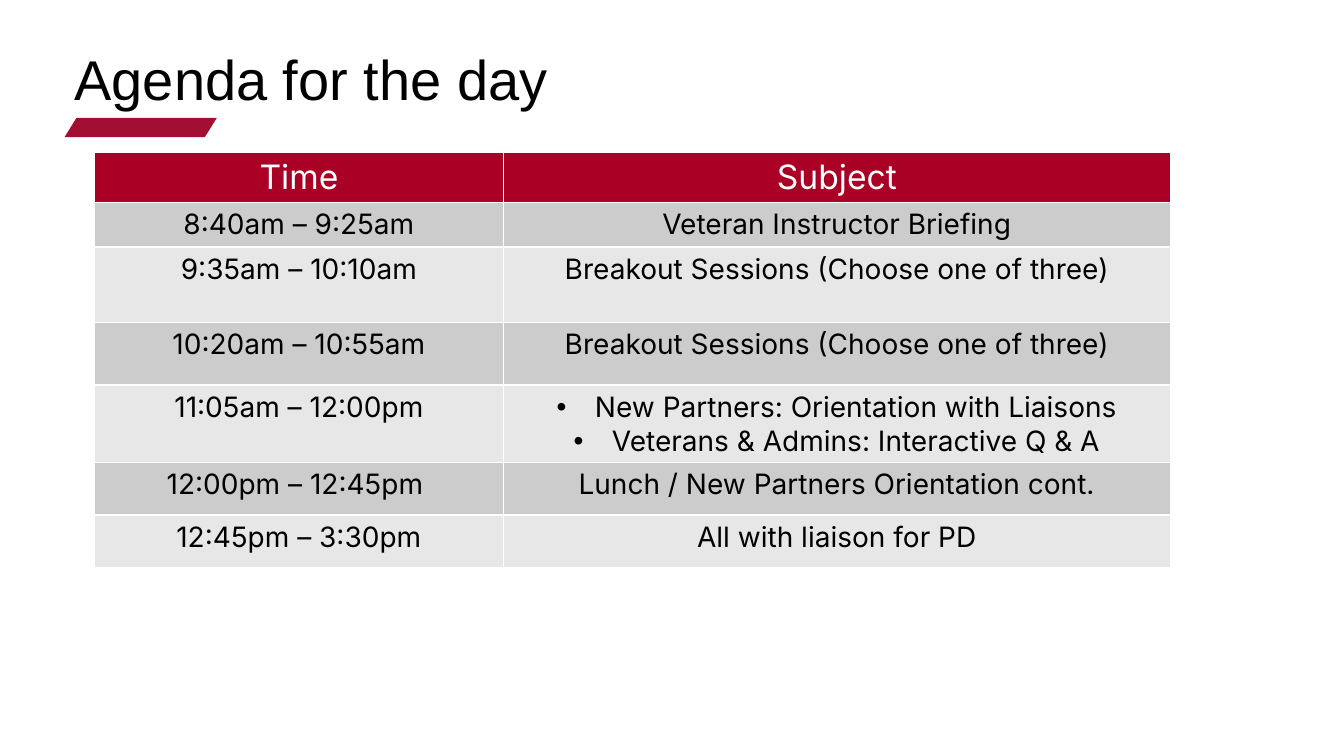
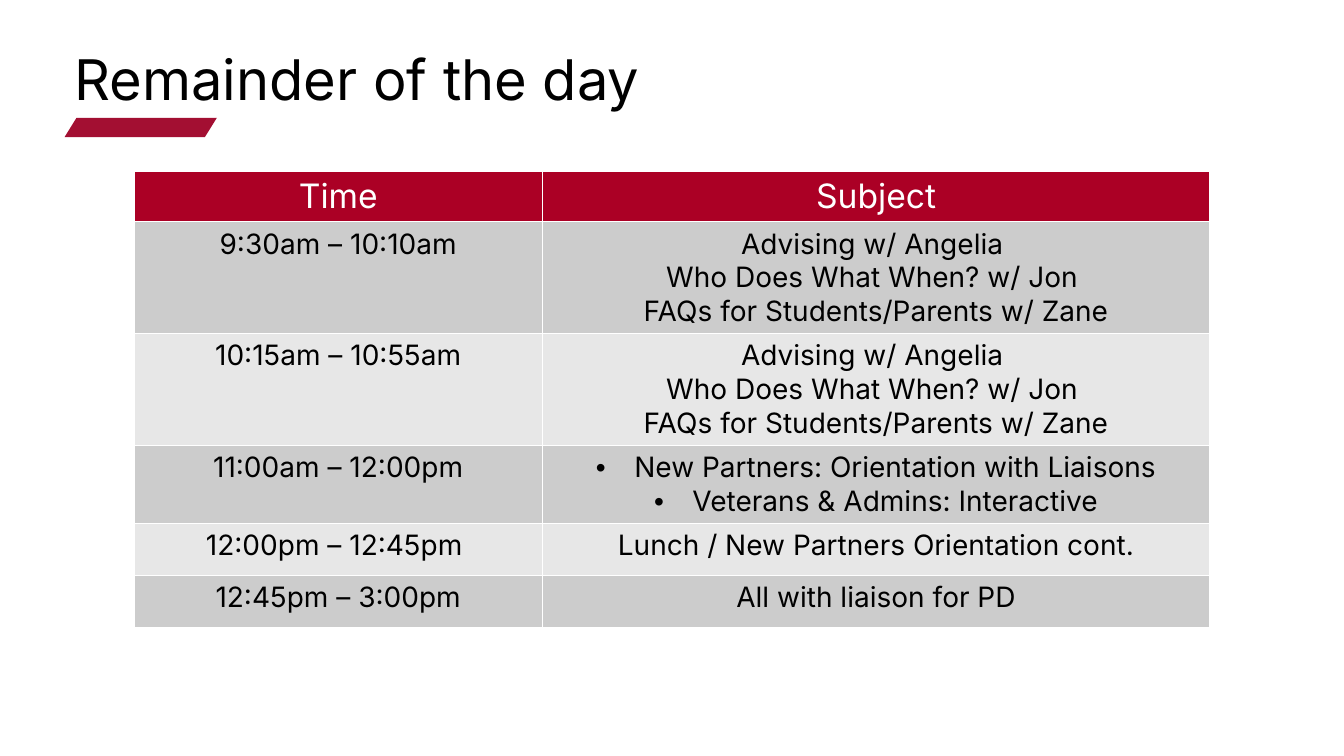
from dataclasses import dataclass

import pptx
import pptx.dml.color
import pptx.enum.shapes
import pptx.enum.text
import pptx.oxml
import pptx.oxml.ns
import pptx.util

Inches = pptx.util.Inches
Pt = pptx.util.Pt
RGB = pptx.dml.color.RGBColor.from_string
ALIGN = pptx.enum.text.PP_ALIGN


@dataclass(frozen=True)
class Theme:
    accent: str = "A30F32"
    header: str = "AB0025"
    bands: tuple[str, str] = ("CCCCCC", "E7E7E7")
    white: str = "FFFFFF"
    black: str = "000000"
    font: str = "Inter"
    title_size: int = 40
    header_size: int = 24
    body_size: int = 20
    rule_width: int = 1


@dataclass(frozen=True)
class Session:
    time: str
    subjects: tuple[str, ...]
    height: float
    bulleted: bool = False


@dataclass(frozen=True)
class Agenda:
    title: str
    title_font: str
    left: float
    top: float
    sessions: tuple[Session, ...]


THEME = Theme()
COLUMN_WIDTHS = (4.05, 6.62)
HEADER_HEIGHT = 0.49
BULLET_INDENT = 0.38

# Content shared by both days
BREAKOUT = ("Breakout Sessions (Choose one of three)",)
WORKSHOPS = (
    "Advising w/ Angelia ",
    "Who Does What When? w/ Jon ",
    "FAQs for Students/Parents w/ Zane",
)
ORIENTATION = "New Partners: Orientation with Liaisons"
LUNCH = Session("12:00pm – 12:45pm ", ("Lunch / New Partners Orientation cont.",), 0.52)
LIAISON = ("All with liaison for PD",)

AGENDAS = (
    Agenda("Agenda for the day", "Arial", 0.94, 1.51, (
        Session("8:40am – 9:25am", ("Veteran Instructor Briefing",), 0.44),
        Session("9:35am – 10:10am", BREAKOUT, 0.75),
        Session("10:20am – 10:55am", BREAKOUT, 0.62),
        Session("11:05am – 12:00pm",
                (ORIENTATION, "Veterans & Admins: Interactive Q & A"), 0.77, True),
        LUNCH,
        Session("12:45pm – 3:30pm", LIAISON, 0.52),
    )),
    Agenda("Remainder of the day", THEME.font, 1.33, 1.7, (
        Session("9:30am – 10:10am", WORKSHOPS, 1.11),
        Session("10:15am – 10:55am", WORKSHOPS, 1.11),
        Session("11:00am – 12:00pm",
                (ORIENTATION, "Veterans & Admins: Interactive"), 0.77, True),
        LUNCH,
        Session("12:45pm – 3:00pm", LIAISON, 0.52),
    )),
)


def add_bullet(paragraph) -> None:
    """Give a paragraph a hanging bullet."""
    properties = paragraph._p.get_or_add_pPr()
    properties.set("marL", str(Inches(BULLET_INDENT)))
    properties.set("indent", str(-Inches(BULLET_INDENT)))
    for tag, name, value in (("buFont", "typeface", "Arial"), ("buChar", "char", "•")):
        element = pptx.oxml.ns.qn(f"a:{tag}")
        properties.append(properties.makeelement(element, {name: value}))


def write_text(frame, lines: tuple[str, ...], *, size: int, color: str,
               font: str = THEME.font, align=ALIGN.CENTER,
               spacing: float | None = None, bulleted: bool = False) -> None:
    """Write one paragraph per line in a single format."""
    frame.word_wrap = True
    for index, line in enumerate(lines):
        paragraph = frame.add_paragraph() if index else frame.paragraphs[0]
        if bulleted:
            add_bullet(paragraph)
        paragraph.alignment = align
        if spacing is not None:
            paragraph.line_spacing = spacing
        run = paragraph.add_run()
        run.text = line
        run.font.name = font
        run.font.size = Pt(size)
        run.font.bold = False
        run.font.color.rgb = RGB(color)


def style_cell(cell, fill: str) -> None:
    """Draw white rules on all sides, then fill the cell."""
    properties = cell._tc.get_or_add_tcPr()
    for side in ("lnL", "lnR", "lnT", "lnB"):
        properties.append(pptx.oxml.parse_xml(
            f'<a:{side} {pptx.oxml.ns.nsdecls("a")} w="{Pt(THEME.rule_width)}">'
            f'<a:solidFill><a:srgbClr val="{THEME.white}"/></a:solidFill></a:{side}>'))
    cell.fill.solid()
    cell.fill.fore_color.rgb = RGB(fill)


def add_heading(slide, title: str, font: str) -> None:
    """Add the slide title with the slanted accent below it."""
    accent = slide.shapes.add_shape(
        pptx.enum.shapes.MSO_SHAPE.PARALLELOGRAM,
        Inches(0.64), Inches(1.17), Inches(1.51), Inches(0.19))
    accent.adjustments[0] = 0.62
    accent.shadow.inherit = False
    accent.fill.solid()
    accent.fill.fore_color.rgb = RGB(THEME.accent)
    accent.line.fill.background()

    heading = slide.shapes.add_textbox(
        Inches(0.64), Inches(0.47), Inches(12.16), Inches(0.55))
    write_text(heading.text_frame, (title,), size=THEME.title_size, color=THEME.black,
               font=font, align=ALIGN.LEFT, spacing=0.9)


def add_schedule(slide, agenda: Agenda) -> None:
    """Add the table of times and subjects."""
    heights = (HEADER_HEIGHT, *(session.height for session in agenda.sessions))
    schedule = slide.shapes.add_table(
        len(heights), len(COLUMN_WIDTHS), Inches(agenda.left), Inches(agenda.top),
        Inches(sum(COLUMN_WIDTHS)), Inches(sum(heights))).table
    schedule.horz_banding = False
    for column, width in zip(schedule.columns, COLUMN_WIDTHS):
        column.width = Inches(width)
    for row, height in zip(schedule.rows, heights):
        row.height = Inches(height)

    # Header row
    for column, label in enumerate(("Time", "Subject")):
        cell = schedule.cell(0, column)
        style_cell(cell, THEME.header)
        write_text(cell.text_frame, (label,), size=THEME.header_size, color=THEME.white)

    # Session rows in alternating bands
    for index, session in enumerate(agenda.sessions):
        for column, lines in enumerate(((session.time,), session.subjects)):
            cell = schedule.cell(index + 1, column)
            style_cell(cell, THEME.bands[index % 2])
            write_text(cell.text_frame, lines, size=THEME.body_size, color=THEME.black,
                       bulleted=session.bulleted and column == 1)


def main() -> None:
    deck = pptx.Presentation()
    deck.slide_width = Inches(13.33)
    deck.slide_height = Inches(7.5)
    blank = deck.slide_layouts[6]
    for agenda in AGENDAS:
        slide = deck.slides.add_slide(blank)
        add_heading(slide, agenda.title, agenda.title_font)
        add_schedule(slide, agenda)
    deck.save("out.pptx")


if __name__ == "__main__":
    main()
